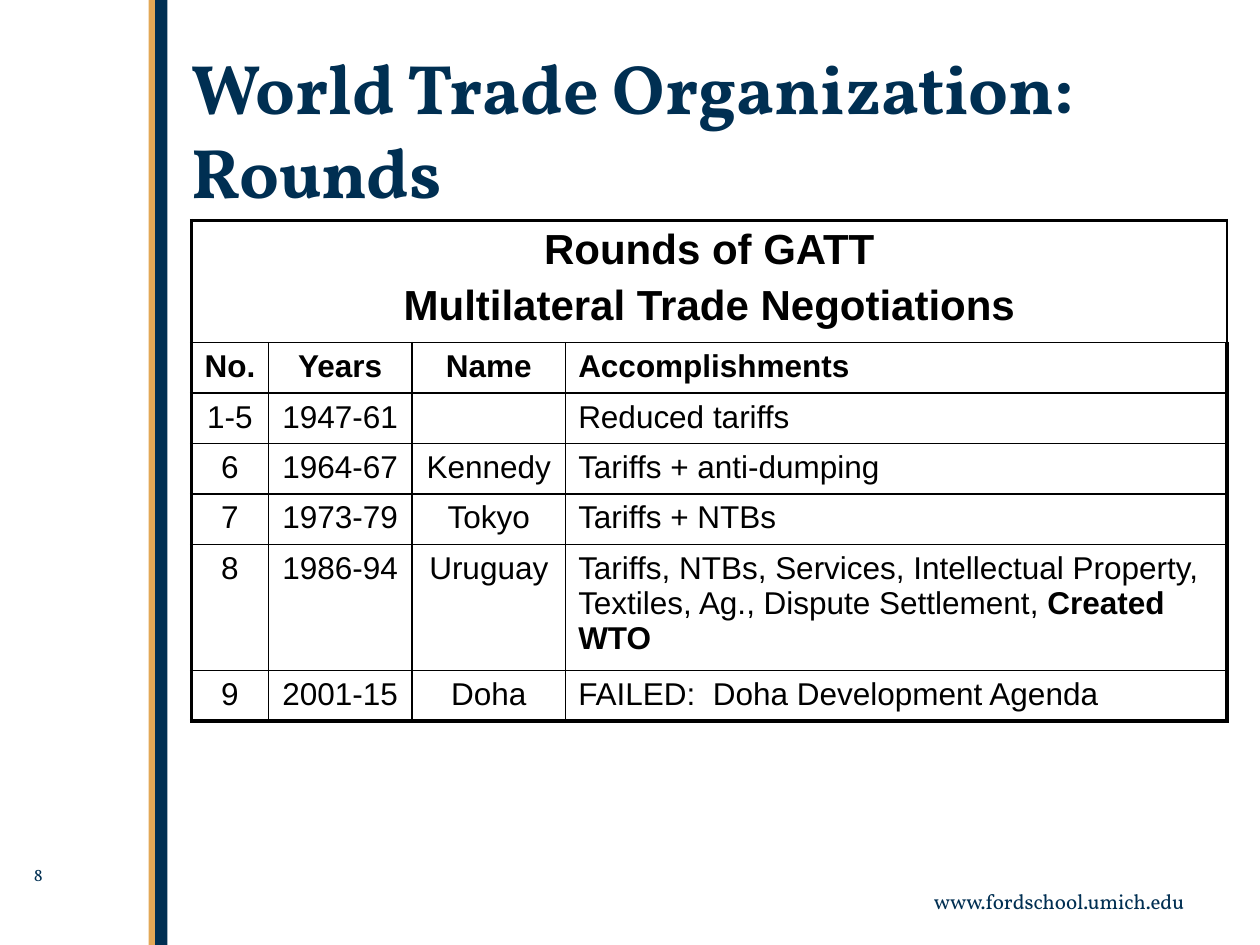
from lxml import etree
from pptx import Presentation
from pptx.dml.color import RGBColor
from pptx.enum.shapes import MSO_SHAPE
from pptx.enum.text import MSO_ANCHOR, PP_ALIGN
from pptx.oxml.ns import qn
from pptx.util import Inches, Pt

RECTANGLE = MSO_SHAPE.RECTANGLE
TOP = MSO_ANCHOR.TOP
LEFT, CENTER, RIGHT = PP_ALIGN.LEFT, PP_ALIGN.CENTER, PP_ALIGN.RIGHT

NAVY = RGBColor(0x00, 0x2F, 0x52)
GOLD = RGBColor(0xE3, 0xA8, 0x56)
BLACK = RGBColor(0, 0, 0)
SERIF, SANS = "Vollkorn", "Arial"

TITLE = "World Trade Organization:  Rounds"
CAPTION = ["Rounds of GATT", "Multilateral Trade Negotiations"]
HEADINGS = ("No.", "Years", "Name", "Accomplishments")
ROUNDS = [
    ("1-5", "1947-61", "", "Reduced tariffs"),
    ("6", "1964-67", "Kennedy", "Tariffs + anti-dumping"),
    ("7", "1973-79", "Tokyo", "Tariffs + NTBs"),
    ("8", "1986-94", "Uruguay",
     "Tariffs, NTBs, Services, Intellectual Property, "
     "Textiles, Ag., Dispute Settlement, "),
    ("9", "2001-15", "Doha", "FAILED:  Doha Development Agenda"),
]
BOLD_ENDINGS = {"8": "Created WTO"}

# Lengths in inches
BARS = [(1.23, 0.1, NAVY), (1.18, 0.05, GOLD)]
SMALL_TEXTS = [
    ("www.fordschool.umich.edu", (7, 7, 2.5, 0.3), 12, RIGHT),
    ("8", (0.17, 6.81, 0.92, 0.34), 10, LEFT),
]
TABLE_LEFT, TABLE_TOP = 1.52, 1.75
COLUMNS = [0.61, 1.14, 1.22, 5.25]
LINE_ROW = 0.38
ROWS = [0.91] + [LINE_ROW] * 4 + [0.94, LINE_ROW]
INNER, OUTER = 1, 2.25  # border widths in points


def style(run, size, font, color, bold=False):
    f = run.font
    f.size, f.name, f.bold = Pt(size), font, bold
    f.color.rgb = color


def set_borders(cell, row, col):
    """Draw a thick frame round the table and thin lines inside it."""
    on_edge = {
        "L": col == 0,
        "R": col == len(COLUMNS) - 1,
        "T": row == 0,
        "B": row == len(ROWS) - 1,
    }
    tc_pr = cell._tc.get_or_add_tcPr()
    for side, is_outer in on_edge.items():
        width = Pt(OUTER if is_outer else INNER)
        line = etree.SubElement(tc_pr, qn(f"a:ln{side}"), w=str(width))
        fill = etree.SubElement(line, qn("a:solidFill"))
        etree.SubElement(fill, qn("a:srgbClr"), val=str(BLACK))
    cell.fill.background()


def format_cell(cell, size, bold, align):
    for p in cell.text_frame.paragraphs:
        p.alignment = align
        for r in p.runs:
            style(r, size, SANS, BLACK, bold)


def add_rounds_table(slide):
    table = slide.shapes.add_table(
        len(ROWS), len(COLUMNS), Inches(TABLE_LEFT), Inches(TABLE_TOP),
        Inches(sum(COLUMNS)), Inches(sum(ROWS))).table
    for column, width in zip(table.columns, COLUMNS):
        column.width = Inches(width)
    for row, height in zip(table.rows, ROWS):
        row.height = Inches(height)
    for i in range(len(ROWS)):
        for j in range(len(COLUMNS)):
            set_borders(table.cell(i, j), i, j)

    caption = table.cell(0, 0)
    caption.merge(table.cell(0, len(COLUMNS) - 1))
    caption.text_frame.text = "\n".join(CAPTION)
    format_cell(caption, 24, True, CENTER)
    caption.text_frame.paragraphs[1].space_before = Pt(5)

    for i, values in enumerate([HEADINGS] + ROUNDS, start=1):
        for j, value in enumerate(values):
            cell = table.cell(i, j)
            cell.text_frame.text = value
            is_last = j == len(COLUMNS) - 1
            format_cell(cell, 18, i == 1, LEFT if is_last else CENTER)
        if values[0] in BOLD_ENDINGS:
            r = cell.text_frame.paragraphs[0].add_run()
            r.text = BOLD_ENDINGS[values[0]]
            style(r, 18, SANS, BLACK, True)


def main():
    prs = Presentation()
    prs.slide_width, prs.slide_height = Inches(10), Inches(7.5)
    s = prs.slides.add_slide(prs.slide_layouts[5])

    for left, width, color in BARS:
        bar = s.shapes.add_shape(
            RECTANGLE, Inches(left), 0, Inches(width), prs.slide_height)
        bar.shadow.inherit = False
        bar.fill.solid()
        bar.fill.fore_color.rgb = color
        bar.line.fill.background()

    for text, box, size, align in SMALL_TEXTS:
        tf = s.shapes.add_textbox(*map(Inches, box)).text_frame
        tf.word_wrap = True
        tf.text = text
        p = tf.paragraphs[0]
        p.alignment = align
        style(p.runs[0], size, SERIF, NAVY)

    title = s.shapes.title
    title.left, title.top = Inches(1.42), Inches(0.3)
    title.width, title.height = Inches(8.08), Inches(1.25)
    tf = title.text_frame
    tf.text = TITLE
    tf.vertical_anchor = TOP
    p = tf.paragraphs[0]
    p.alignment = LEFT
    style(p.runs[0], 40, SERIF, NAVY, True)

    add_rounds_table(s)
    prs.save("out.pptx")


if __name__ == "__main__":
    main()
